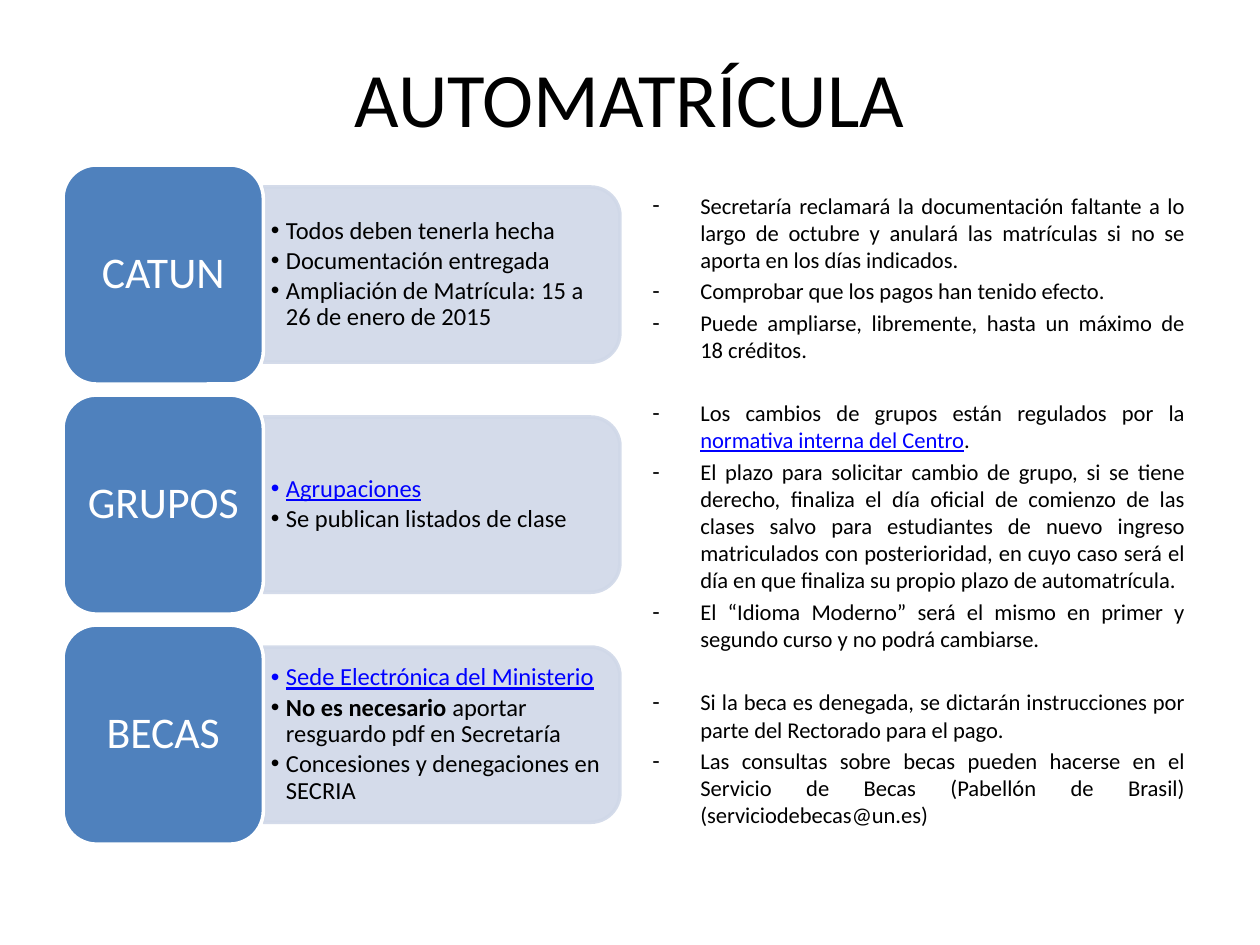
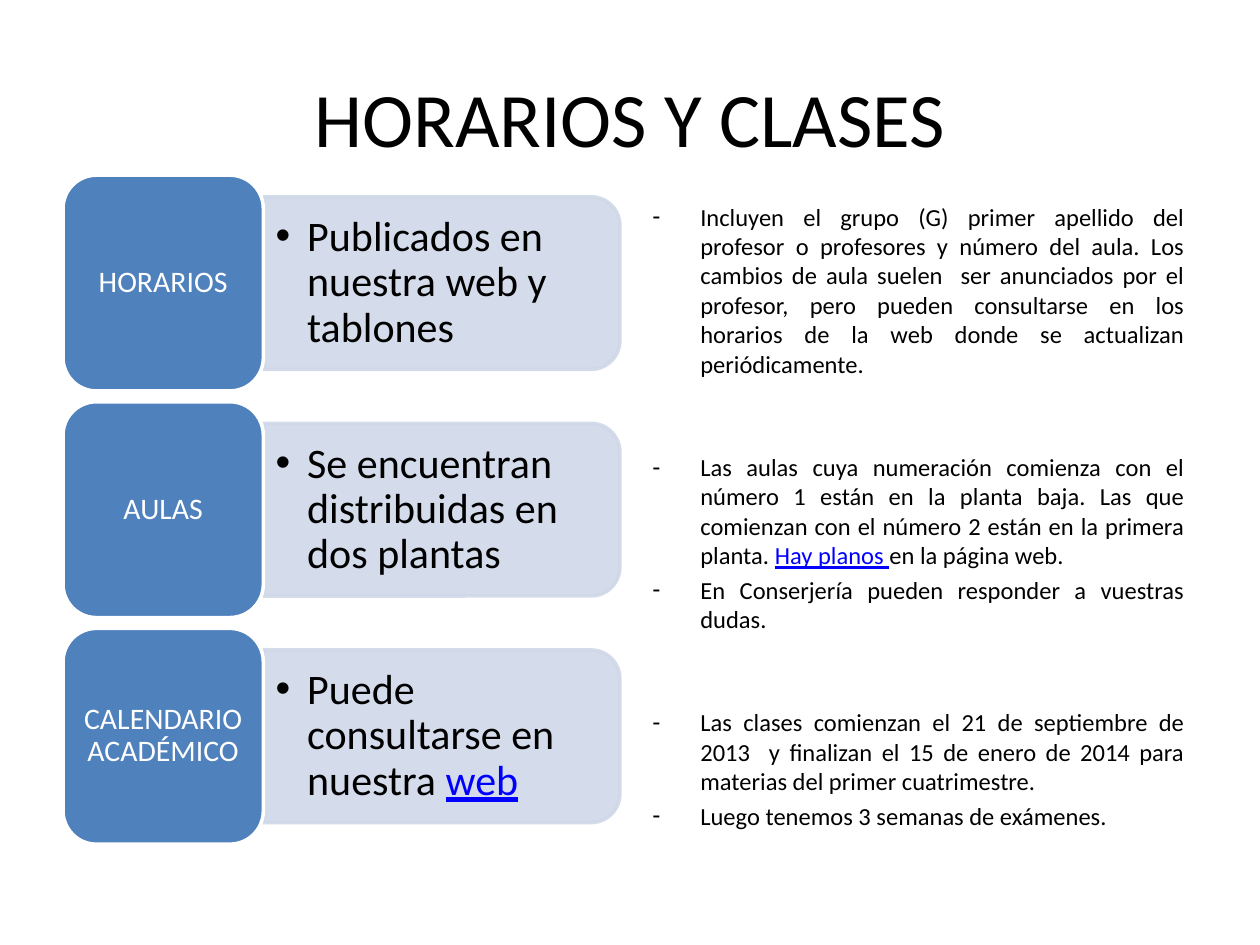
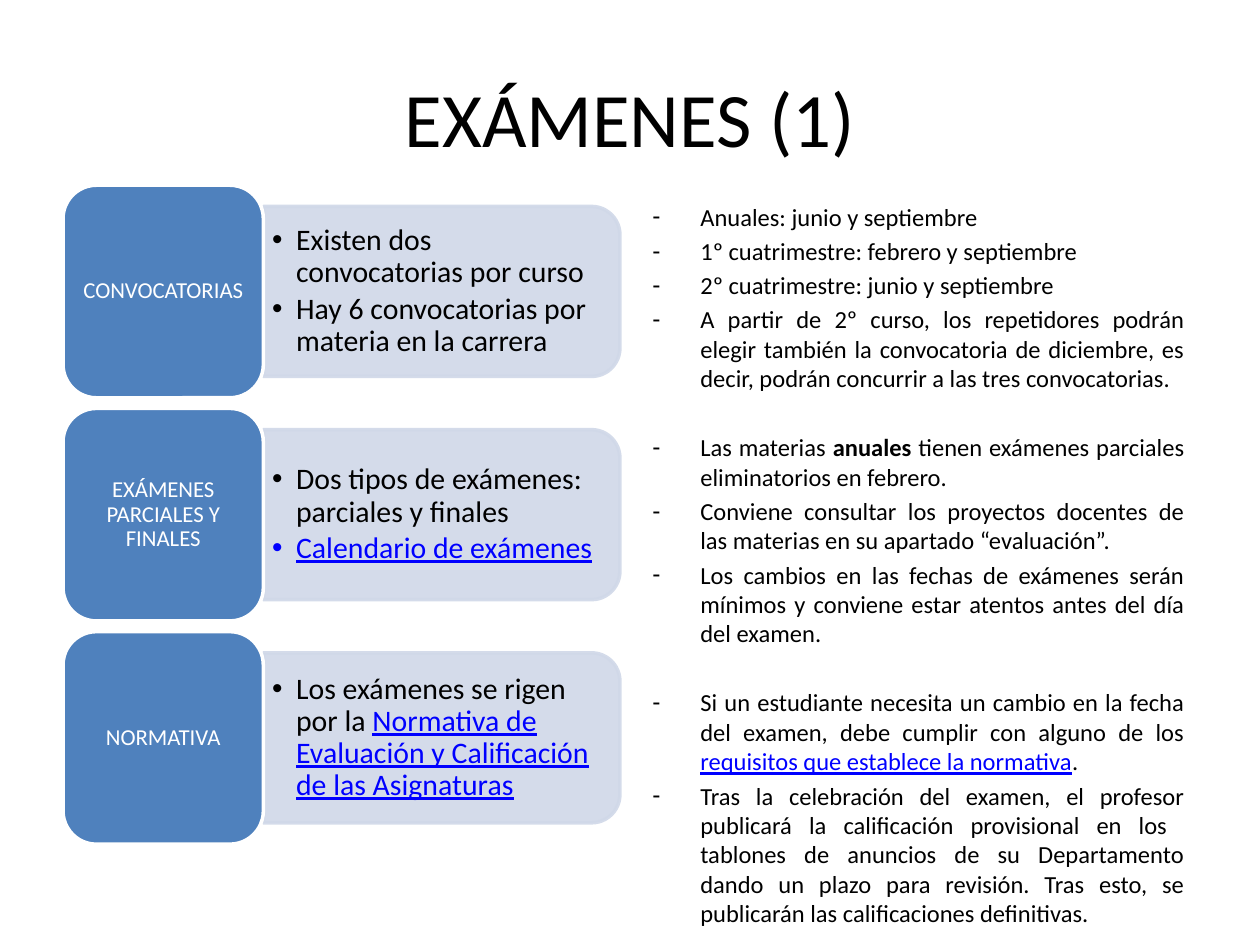
from lxml.etree import SubElement
from pptx import Presentation
from pptx.dml.color import RGBColor
from pptx.enum.shapes import MSO_SHAPE
from pptx.enum.text import MSO_ANCHOR, PP_ALIGN
from pptx.oxml.ns import qn
from pptx.util import Inches, Pt

COLORS = {"ink": "000000", "link": "0000FF", "tile": "4F81BD", "bar": "D0D8E8", "white": "FFFFFF"}
FONT = "Calibri"
COLUMNS, ROWS = 100, 75
LEFT, TILE_WIDTH, BAR_WIDTH = 5, 15.9, 28.3
BAR_LEFT = LEFT + TILE_WIDTH
BAR_TEXT_WIDTH = 27.6
NOTES_LEFT, NOTES_WIDTH, NOTES_BOTTOM = 50.8, 44.2, 70.6
TILES_BOTTOM = 67
GAP_SHARE, BAR_SHARE = 0.05, 0.8
NOTES_INDENT = 0.38


def link(text):
    return text, {"underline": True}, "link"


def bold(text):
    return text, {"bold": True}, "ink"


def assign(target, values):
    for name, value in values.items():
        setattr(target, name, value)


class Deck:
    def __init__(self):
        self.deck = Presentation()
        assign(self.deck, {"slide_width": Inches(10), "slide_height": Inches(7.5)})
        self.page = None

    def place(self, left, top, width, height):
        column = self.deck.slide_width / COLUMNS
        row = self.deck.slide_height / ROWS
        return [round(value) for value in (left * column, top * row, width * column, height * row)]

    def frame(self, shape, inset, anchor):
        side, edge = Inches(inset[0]), Inches(inset[1])
        assign(shape.text_frame, {
            "word_wrap": True, "vertical_anchor": anchor,
            "margin_left": side, "margin_right": side, "margin_top": edge, "margin_bottom": edge,
        })
        return shape.text_frame

    def fill_para(self, para, spans, size, color="ink", **formats):
        assign(para, formats)
        for item in [spans] if isinstance(spans, str) else spans:
            text, style, ink = (item, {}, color) if isinstance(item, str) else item
            span = para.add_run()
            span.text = text
            assign(span.font, {"name": FONT, "size": Pt(size), **style})
            span.font.color.rgb = RGBColor.from_string(COLORS[ink])

    def bullet(self, para, sign, indent):
        properties = para._p.get_or_add_pPr()
        properties.set("marL", str(Inches(indent)))
        properties.set("indent", str(-Inches(indent)))
        SubElement(properties, qn("a:buFont"), typeface="Arial")
        SubElement(properties, qn("a:buChar"), char=sign)

    def paint(self, shape, fill, line, opacity=100):
        shape.shadow.inherit = False
        shape.line.width = Pt(2)
        for part, color in ((shape.fill, fill), (shape.line.fill, line)):
            part.solid()
            part.fore_color.rgb = RGBColor.from_string(COLORS[color])
        if opacity < 100:
            for node in list(shape._element.spPr.iter(qn("a:srgbClr"))):
                SubElement(node, qn("a:alpha"), val=str(opacity * 1000))

    def paragraphs(self, frame, items):
        for index, item in enumerate(items):
            yield (frame.paragraphs[0] if index == 0 else frame.add_paragraph()), item

    def start(self, title, height):
        self.page = self.deck.slides.add_slide(self.deck.slide_layouts[5])
        box = self.page.shapes.title
        box.left, box.top, box.width, box.height = self.place(LEFT, 3, 90, height)
        frame = self.frame(box, (0.1, 0.05), MSO_ANCHOR.MIDDLE)
        self.fill_para(frame.paragraphs[0], title, 44, alignment=PP_ALIGN.CENTER)

    def bar(self, middle, height, points, size, inset, indent):
        thickness = height * BAR_SHARE
        center = BAR_LEFT + BAR_WIDTH / 2
        shape = self.page.shapes.add_shape(
            MSO_SHAPE.ROUND_2_SAME_RECTANGLE,
            *self.place(center - thickness / 2, middle - BAR_WIDTH / 2, thickness, BAR_WIDTH))
        shape.rotation = 90
        self.paint(shape, "bar", "bar", 90)
        text_height = thickness * 0.9
        box = self.page.shapes.add_textbox(
            *self.place(BAR_LEFT, middle - text_height / 2, BAR_TEXT_WIDTH, text_height))
        frame = self.frame(box, inset, MSO_ANCHOR.MIDDLE)
        for para, spans in self.paragraphs(frame, points):
            self.fill_para(para, spans, size, line_spacing=0.9, space_after=Pt(0.15 * size))
            self.bullet(para, "•", indent)

    def tile(self, top, height, label, size, inset):
        shape = self.page.shapes.add_shape(
            MSO_SHAPE.ROUNDED_RECTANGLE, *self.place(LEFT, top, TILE_WIDTH, height))
        self.paint(shape, "tile", "white")
        frame = self.frame(shape, inset, MSO_ANCHOR.MIDDLE)
        self.fill_para(frame.paragraphs[0], label, size, "white",
                       alignment=PP_ALIGN.CENTER, line_spacing=0.9)

    def topics(self, top, rows, tile_style, bar_style):
        count = len(rows)
        height = (TILES_BOTTOM - top) / (count + (count - 1) * GAP_SHARE)
        for index, (label, points) in enumerate(rows):
            tile_top = top + index * height * (1 + GAP_SHARE)
            self.bar(tile_top + height / 2, height, points, **bar_style)
            self.tile(tile_top, height, label, **tile_style)

    def notes(self, top, groups, size, gap_lines):
        box = self.page.shapes.add_textbox(
            *self.place(NOTES_LEFT, top, NOTES_WIDTH, NOTES_BOTTOM - top))
        frame = self.frame(box, (0.1, 0.05), MSO_ANCHOR.TOP)
        items = [(spans, number > 0 and place == 0)
                 for number, group in enumerate(groups) for place, spans in enumerate(group)]
        for para, (spans, opens_group) in self.paragraphs(frame, items):
            before = size * (0.2 + 1.41 * gap_lines * opens_group)
            self.fill_para(para, spans, size, alignment=PP_ALIGN.JUSTIFY, space_before=Pt(before))
            self.bullet(para, "-", NOTES_INDENT)


PAGES = [
    {
        "title": ("AUTOMATRÍCULA", 9.3),
        "topics": (13.1, [
            ("CATUN", ["Todos deben tenerla hecha", "Documentación entregada",
                       "Ampliación de Matrícula: 15 a 26 de enero de 2015"]),
            ("GRUPOS", [[link("Agrupaciones")], "Se publican listados de clase"]),
            ("BECAS", [[link("Sede Electrónica del Ministerio")],
                       [bold("No es necesario"), " aportar resguardo pdf en Secretaría"],
                       "Concesiones y denegaciones en SECRIA"]),
        ], {"size": 25, "inset": (0.1, 0.05)},
            {"size": 14, "inset": (0.06, 0.03), "indent": 0.12}),
        "notes": (14.7, [
            ["Secretaría reclamará la documentación faltante a lo largo de octubre y anulará "
             "las matrículas si no se aporta en los días indicados.",
             "Comprobar que los pagos han tenido efecto.",
             "Puede ampliarse, libremente, hasta un máximo de 18 créditos."],
            [["Los cambios de grupos están regulados por la ",
              link("normativa interna del Centro"), "."],
             "El plazo para solicitar cambio de grupo, si se tiene derecho, finaliza el día "
             "oficial de comienzo de las clases salvo para estudiantes de nuevo ingreso "
             "matriculados con posterioridad, en cuyo caso será el día en que finaliza su "
             "propio plazo de automatrícula.",
             "El “Idioma Moderno” será el mismo en primer y segundo curso y no podrá cambiarse."],
            ["Si la beca es denegada, se dictarán instrucciones por parte del Rectorado "
             "para el pago.",
             "Las consultas sobre becas pueden hacerse en el Servicio de Becas "
             "(Pabellón de Brasil) (serviciodebecas@un.es)"],
        ], 12.9, 1),
    },
    {
        "title": ("HORARIOS Y CLASES", 12.5),
        "topics": (13.9, [
            ("HORARIOS", ["Publicados en nuestra web y tablones"]),
            ("AULAS", ["Se encuentran distribuidas en dos plantas"]),
            ("CALENDARIO ACADÉMICO", [["Puede consultarse en nuestra ", link("web")]]),
        ], {"size": 17, "inset": (0.07, 0.04)},
            {"size": 24, "inset": (0.1, 0.05), "indent": 0.25}),
        "notes": (15.5, [
            ["Incluyen el grupo (G) primer apellido del profesor o profesores y número del "
             "aula. Los cambios de aula suelen  ser anunciados por el profesor, pero pueden "
             "consultarse en los horarios de la web donde se actualizan periódicamente."],
            [["Las aulas cuya numeración comienza con el número 1 están en la planta baja. "
              "Las que comienzan con el número 2 están en la primera planta. ",
              link("Hay planos "), "en la página web."],
             "En Conserjería pueden responder a vuestras dudas."],
            ["Las clases comienzan el 21 de septiembre de 2013  y finalizan el 15 de enero "
             "de 2014 para materias del primer cuatrimestre.",
             "Luego tenemos 3 semanas de exámenes."],
        ], 14, 2),
    },
    {
        "title": ("EXÁMENES (1)", 12.5),
        "topics": (14.7, [
            ("CONVOCATORIAS", ["Existen dos convocatorias por curso",
                               "Hay 6 convocatorias por materia en la carrera"]),
            ("EXÁMENES PARCIALES Y FINALES", ["Dos tipos de exámenes: parciales y finales",
                                              [link("Calendario de exámenes")]]),
            ("NORMATIVA", [["Los exámenes se rigen por la ",
                            link("Normativa de Evaluación y Calificación de las Asignaturas")]]),
        ], {"size": 13, "inset": (0.05, 0.03)},
            {"size": 17, "inset": (0.07, 0.04), "indent": 0.19}),
        "notes": (15.5, [
            ["Anuales: junio y septiembre",
             "1º cuatrimestre: febrero y septiembre",
             "2º cuatrimestre: junio y septiembre",
             "A partir de 2º curso, los repetidores podrán elegir también la convocatoria de "
             "diciembre, es decir, podrán concurrir a las tres convocatorias."],
            [["Las materias ", bold("anuales"),
              " tienen exámenes parciales eliminatorios en febrero."],
             "Conviene consultar los proyectos docentes de las materias en su apartado "
             "“evaluación”.",
             "Los cambios en las fechas de exámenes serán mínimos y conviene estar atentos "
             "antes del día del examen."],
            [["Si un estudiante necesita un cambio en la fecha del examen, debe cumplir con "
              "alguno de los ", link("requisitos que establece la normativa"), "."],
             "Tras la celebración del examen, el profesor publicará la calificación "
             "provisional en los  tablones de anuncios de su Departamento dando un plazo "
             "para revisión. Tras esto, se publicarán las calificaciones definitivas."],
        ], 14, 1),
    },
]


def main():
    builder = Deck()
    for page in PAGES:
        builder.start(*page["title"])
        builder.topics(*page["topics"])
        builder.notes(*page["notes"])
    builder.deck.save("out.pptx")


if __name__ == "__main__":
    main()
